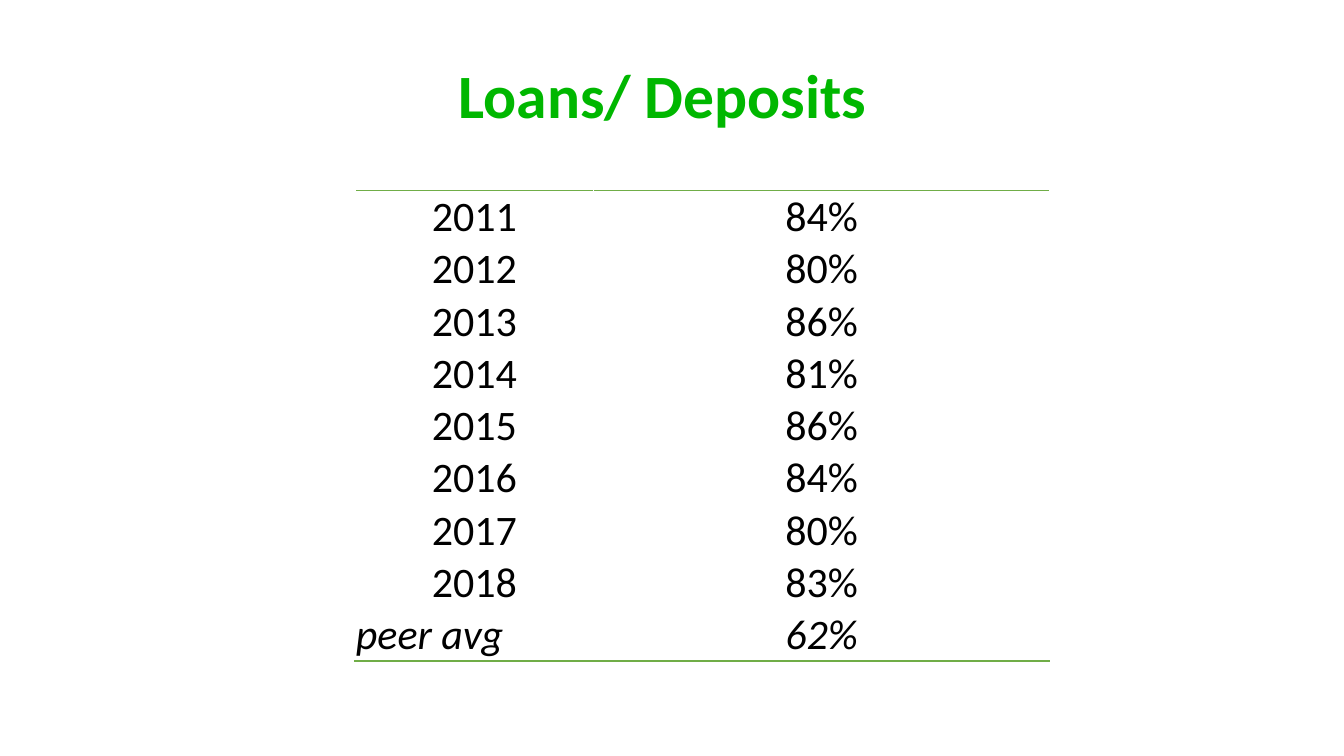
import pptx
import pptx.dml.color
import pptx.enum.text
import pptx.oxml
import pptx.oxml.ns
import pptx.util
from pptx.util import Inches

RGBColor = pptx.dml.color.RGBColor
ANCHOR = pptx.enum.text.MSO_ANCHOR
ALIGN = pptx.enum.text.PP_ALIGN

TITLE_GREEN = RGBColor(0x00, 0xB7, 0x00)
RULE_GREEN = RGBColor(0x70, 0xAD, 0x47)
BLACK = RGBColor(0x00, 0x00, 0x00)

RATIOS = [
    ("2011", "84%"),
    ("2012", "80%"),
    ("2013", "86%"),
    ("2014", "81%"),
    ("2015", "86%"),
    ("2016", "84%"),
    ("2017", "80%"),
    ("2018", "83%"),
    ("peer avg", "62%"),
]
YEAR_SHARE = 0.344


def set_values(target, values):
    """Set each attribute named in values on the target."""
    for name, value in values.items():
        setattr(target, name, value)


def write_text(para, text, color, font_values):
    """Add one Calibri span to the paragraph."""
    span = para.add_run()
    span.text = text
    set_values(span.font, {"name": "Calibri", **font_values})
    span.font.color.rgb = color


def add_rule(cell, side):
    """Draw a one-point green border on the top (T) or bottom (B) of a cell."""
    border = pptx.oxml.parse_xml(
        f'<a:ln{side} {pptx.oxml.ns.nsdecls("a")} w="{pptx.util.Pt(1)}">'
        f'<a:solidFill><a:srgbClr val="{RULE_GREEN}"/></a:solidFill></a:ln{side}>'
    )
    cell._tc.get_or_add_tcPr().insert(0, border)


def add_title(page, left, top, width, height):
    """Place the slide title in the given box."""
    frame = page.shapes.add_textbox(left, top, width, height).text_frame
    set_values(frame, {"word_wrap": True, "vertical_anchor": ANCHOR.MIDDLE})
    para = frame.paragraphs[0]
    para.line_spacing = 0.9
    write_text(para, "Loans/ Deposits", TITLE_GREEN,
               {"size": pptx.util.Pt(44), "bold": True})


def fill_cell(cell, text, is_average, alignment):
    """Format one table cell and write its text."""
    cell.fill.background()
    set_values(cell, {
        "margin_left": Inches(0.01),
        "margin_right": Inches(0.01),
        "margin_top": Inches(0.01),
        "margin_bottom": 0,
        "vertical_anchor": ANCHOR.BOTTOM if is_average else ANCHOR.MIDDLE,
    })
    para = cell.text_frame.paragraphs[0]
    para.alignment = alignment
    write_text(para, text, BLACK,
               {"size": pptx.util.Pt(30), "bold": False, "italic": is_average})


def add_ratio_table(page, left, top, width, height):
    """Place the yearly ratios between two green rules in the given box."""
    table = page.shapes.add_table(len(RATIOS), 2, left, top, width, height).table
    set_values(table, {"first_row": False, "horz_banding": False})
    year_width = int(width * YEAR_SHARE)
    table.columns[0].width = year_width
    table.columns[1].width = width - year_width
    last = len(RATIOS) - 1
    for row, texts in enumerate(RATIOS):
        for column, text in enumerate(texts):
            cell = table.cell(row, column)
            is_label = row == last and column == 0
            fill_cell(cell, text, row == last,
                      ALIGN.LEFT if is_label else ALIGN.CENTER)
            if row == 0:
                add_rule(cell, "T")
            elif row == last:
                add_rule(cell, "B")


def main():
    """Build and save the one-slide deck."""
    deck = pptx.Presentation()
    set_values(deck, {"slide_width": Inches(13.33), "slide_height": Inches(7.5)})
    page = deck.slides.add_slide(deck.slide_layouts[6])
    add_title(page, Inches(4.45), Inches(0.25), Inches(5.03), Inches(1.45))
    add_ratio_table(page, Inches(3.52), Inches(1.89), Inches(6.89), Inches(4.67))
    deck.save("out.pptx")


if __name__ == "__main__":
    main()
